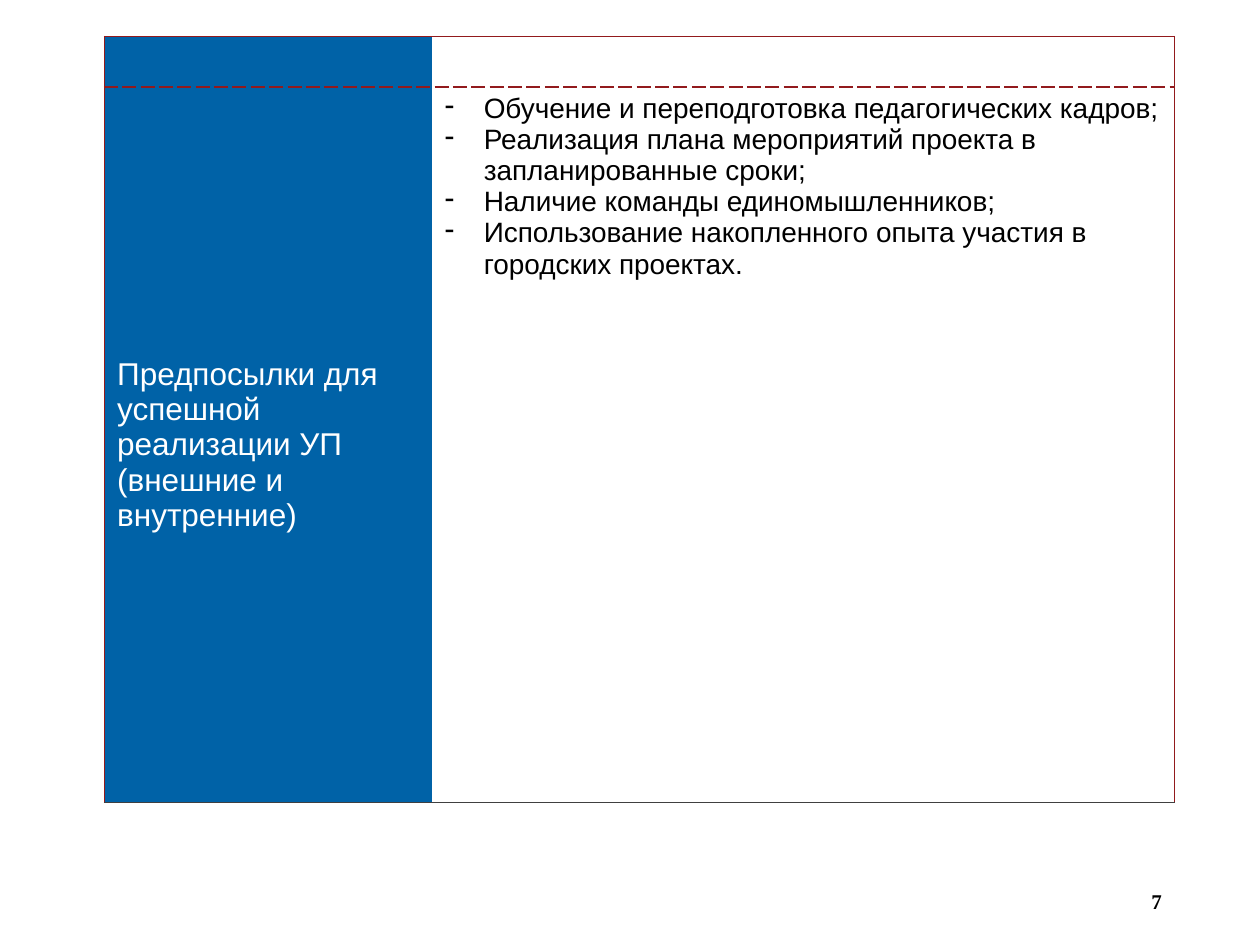
from lxml.etree import SubElement
from pptx import Presentation
from pptx.dml.color import RGBColor
from pptx.enum.text import MSO_ANCHOR as Anchor, PP_ALIGN as Align
from pptx.oxml.ns import qn
from pptx.util import Inches, Pt

BLUE = RGBColor(0x00, 0x62, 0xA7)
DARK_RED = RGBColor(0x92, 0x1A, 0x1D)
GREY = RGBColor(0x40, 0x40, 0x40)
WHITE = RGBColor(0xFF, 0xFF, 0xFF)
BLACK = RGBColor(0x00, 0x00, 0x00)

HEADING = ["Предпосылки для успешной реализации УП", "(внешние и внутренние)"]
CONDITIONS = [
    "Обучение и переподготовка педагогических кадров;",
    "Реализация плана мероприятий проекта в запланированные сроки;",
    "Наличие команды единомышленников;",
    "Использование накопленного опыта участия в городских проектах.",
]


def write_text(frame, lines, *, size, color, font="Arial", bold=False,
               align=Align.LEFT, bullet=None):
    for index, line in enumerate(lines):
        paragraph = frame.add_paragraph() if index else frame.paragraphs[0]
        paragraph.alignment = align
        run = paragraph.add_run()
        run.text = line
        run.font.size = Pt(size)
        run.font.name = font
        run.font.bold = bold
        run.font.color.rgb = color
        if bullet:
            properties = paragraph._p.get_or_add_pPr()
            properties.set("marL", str(Inches(0.31)))
            properties.set("indent", str(-Inches(0.31)))
            SubElement(properties, qn("a:buChar"), char=bullet)


def add_border(cell, side, color=None, width=1, dash="solid"):
    line = SubElement(cell._tc.get_or_add_tcPr(), qn(f"a:ln{side}"), w=str(Pt(width)))
    if color is None:
        SubElement(line, qn("a:noFill"))
        return
    fill = SubElement(line, qn("a:solidFill"))
    SubElement(fill, qn("a:srgbClr"), val=str(color))
    SubElement(line, qn("a:prstDash"), val=dash)


def style_cell(cell, fill, borders):
    for side in "LRTB":
        add_border(cell, side, **borders[side])
    cell.fill.solid()
    cell.fill.fore_color.rgb = fill


def add_conditions_table(slide):
    table = slide.shapes.add_table(
        2, 2, Inches(0.83), Inches(0.29), Inches(8.49), Inches(6.08)).table
    table.first_row = False
    table.horz_banding = False
    for column, width in zip(table.columns, (2.6, 5.89)):
        column.width = Inches(width)
    for row, height in zip(table.rows, (0.4, 5.68)):
        row.height = Inches(height)

    outer = {"color": DARK_RED}
    dashed = {"color": DARK_RED, "dash": "sysDash"}
    thin = {"color": GREY, "width": 0.5}
    for row, (top, bottom) in enumerate([(outer, dashed), (dashed, thin)]):
        for column, (fill, left, right) in enumerate(
                [(BLUE, outer, {}), (WHITE, {}, outer)]):
            style_cell(table.cell(row, column), fill,
                       {"L": left, "R": right, "T": top, "B": bottom})

    heading = table.cell(1, 0)
    heading.vertical_anchor = Anchor.MIDDLE
    write_text(heading.text_frame, HEADING, size=18, color=WHITE)
    write_text(table.cell(1, 1).text_frame, CONDITIONS, size=16, color=BLACK, bullet="-")


def add_page_number(slide, number):
    frame = slide.shapes.add_textbox(
        Inches(7.07), Inches(6.95), Inches(2.25), Inches(0.4)).text_frame
    frame.word_wrap = True
    frame.vertical_anchor = Anchor.MIDDLE
    write_text(frame, [number], size=12, color=BLACK, font="Times New Roman",
               bold=True, align=Align.RIGHT)


def main():
    deck = Presentation()
    deck.slide_width = Inches(10)
    deck.slide_height = Inches(7.5)
    slide = deck.slides.add_slide(deck.slide_layouts[6])
    add_page_number(slide, "7")
    add_conditions_table(slide)
    deck.save("out.pptx")


if __name__ == "__main__":
    main()
